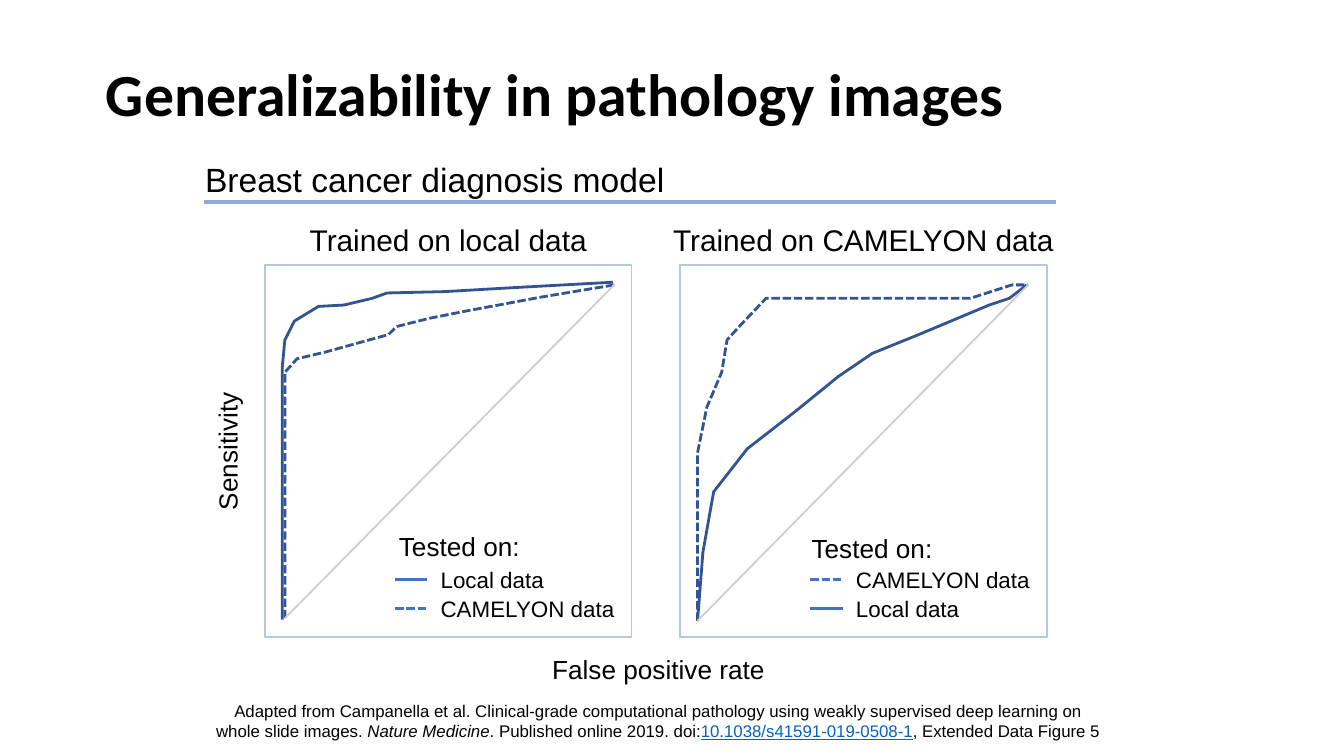
from dataclasses import dataclass

from lxml import etree
from pptx import Presentation
from pptx.dml.color import RGBColor
from pptx.enum.dml import MSO_LINE
from pptx.enum.shapes import MSO_CONNECTOR, MSO_SHAPE
from pptx.enum.text import MSO_ANCHOR, MSO_AUTO_SIZE, PP_ALIGN
from pptx.oxml.ns import qn
from pptx.util import Pt

PX = 9144  # EMU per px, 100 px to the inch
SLIDE_WIDTH = 1000
LEFT, CENTER = PP_ALIGN.LEFT, PP_ALIGN.CENTER
MIDDLE = MSO_ANCHOR.MIDDLE
FIT_SHAPE = MSO_AUTO_SIZE.SHAPE_TO_FIT_TEXT
DASH = MSO_LINE.SQUARE_DOT
STRAIGHT = MSO_CONNECTOR.STRAIGHT
RECTANGLE = MSO_SHAPE.RECTANGLE


@dataclass(frozen=True)
class Theme:
    title_font: str = "Calibri"
    body_font: str = "Arial"
    text: str = "000000"
    link: str = "0563C1"
    frame: str = "B4C7E7"
    curve: str = "325491"
    key: str = "4472C4"
    chance: str = "D0CECE"
    rule: str = "8FAADC"
    title_size: int = 32
    section_size: int = 18
    panel_size: int = 16
    label_size: int = 14
    key_size: int = 12
    source_size: int = 9
    thin: float = 1
    medium: float = 1.5
    thick: float = 2.25


@dataclass(frozen=True)
class Panel:
    title: str
    title_width: int
    left: int
    heading_left: int
    heading_top: int
    curves: tuple  # (points, dashed)
    chance: tuple
    keys: tuple  # (label, label width, dashed)


class SlideBuilder:
    def __init__(self, slide, theme):
        self.shapes = slide.shapes
        self.theme = theme

    def style_line(self, line, color, width, dashed=False):
        line.color.rgb = RGBColor.from_string(color)
        line.width = Pt(width)
        if dashed:
            line.dash_style = DASH

    def style_font(self, font, size, color=None, name=None):
        font.name = name or self.theme.body_font
        font.size = Pt(size)
        font.color.rgb = RGBColor.from_string(color or self.theme.text)

    def text_box(self, left, top, width, height, wrap):
        box = self.shapes.add_textbox(left * PX, top * PX, width * PX, height * PX)
        box.text_frame.word_wrap = wrap
        return box

    def title(self, text, *place):
        frame = self.text_box(*place, wrap=True).text_frame
        frame.vertical_anchor = MIDDLE
        frame.text = text
        paragraph = frame.paragraphs[0]
        paragraph.line_spacing = 0.9
        font = paragraph.runs[0].font
        self.style_font(font, self.theme.title_size, name=self.theme.title_font)
        font.bold = True

    def label(self, text, size, *place, align=LEFT, rotation=0):
        box = self.text_box(*place, wrap=False)
        box.rotation = rotation
        frame = box.text_frame
        frame.auto_size = FIT_SHAPE
        frame.text = text
        paragraph = frame.paragraphs[0]
        paragraph.alignment = align
        self.style_font(paragraph.runs[0].font, size)

    def citation(self, parts, *place):
        """Add a centred source line from (text, style) parts."""
        frame = self.text_box(*place, wrap=True).text_frame
        frame.margin_left = frame.margin_right = 7 * PX
        frame.margin_top = frame.margin_bottom = 4 * PX
        paragraph = frame.paragraphs[0]
        paragraph.alignment = CENTER
        for text, style in parts:
            run = paragraph.add_run()
            run.text = text
            is_link = style == "link"
            self.style_font(run.font, self.theme.source_size,
                            self.theme.link if is_link else None)
            run.font.underline = is_link
            run.font.italic = style == "italic"

    def frame(self, left, top, width, height):
        box = self.shapes.add_shape(RECTANGLE, left * PX, top * PX, width * PX, height * PX)
        box.shadow.inherit = False
        box.fill.background()
        self.style_line(box.line, self.theme.frame, self.theme.thin)

    def curve(self, points, dashed):
        builder = self.shapes.build_freeform(*points[0], scale=PX)
        builder.add_line_segments(points[1:], close=False)
        roc = builder.convert_to_shape()
        roc.shadow.inherit = False
        roc.fill.background()
        self.style_line(roc.line, self.theme.curve, self.theme.medium, dashed)

    def line(self, x1, y1, x2, y2, color, width, dashed=False):
        connector = self.shapes.add_connector(STRAIGHT, x1 * PX, y1 * PX, x2 * PX, y2 * PX)
        etree.SubElement(connector._element.spPr, qn("a:effectLst"))
        self.style_line(connector.line, color, width, dashed)

    def panel(self, panel):
        theme = self.theme
        top, width, height = 197, 273, 277
        self.frame(panel.left, top, width, height)
        for points, dashed in panel.curves:
            self.curve(points, dashed)
        self.line(*panel.chance, theme.chance, theme.thin)
        title_left = panel.left + (width - panel.title_width) // 2
        self.label(panel.title, theme.panel_size, title_left, 160,
                   panel.title_width, 37, align=CENTER)
        self.label("Tested on:", theme.label_size, panel.heading_left,
                   panel.heading_top, 110, 34)
        key_left, key_right = panel.left + 97, panel.left + 121
        for row, (text, text_width, dashed) in enumerate(panel.keys):
            y = 431 + 22 * row
            self.line(key_left, y, key_right, y, theme.key, theme.medium, dashed)
            self.label(text, theme.key_size, key_right, y - 15, text_width, 30)


LOCAL_KEY = ("Local data", 98)
CAMELYON_KEY = ("CAMELYON data", 151)

PANELS = (
    Panel(
        "Trained on local data", 229, 197, 287, 390,
        curves=(
            (((210, 461), (210, 274), (212, 253), (219, 239), (237, 228), (256, 227),
              (277, 222), (288, 218), (331, 217), (383, 214), (456, 210)), False),
            (((212, 460), (212, 277), (221, 267), (242, 262), (289, 249), (295, 243),
              (319, 237), (349, 231), (371, 227), (403, 221), (457, 212)), True),
        ),
        chance=(212, 460, 457, 212),
        keys=((*LOCAL_KEY, False), (*CAMELYON_KEY, True)),
    ),
    Panel(
        "Trained on CAMELYON data", 307, 506, 594, 391,
        curves=(
            (((519, 462), (519, 337), (526, 303), (537, 277), (541, 253), (551, 242),
              (570, 222), (722, 222), (753, 212), (765, 212)), True),
            (((519, 462), (523, 411), (531, 366), (556, 334), (592, 306), (624, 280),
              (649, 263), (686, 248), (736, 227), (751, 222), (764, 212)), False),
        ),
        chance=(519, 462, 765, 212),
        keys=((*CAMELYON_KEY, True), (*LOCAL_KEY, False)),
    ),
)

SOURCE = (
    ("Adapted from Campanella et al. Clinical-grade computational pathology using "
     "weakly supervised deep learning on whole slide images. ", "plain"),
    ("Nature Medicine", "italic"),
    (". Published online 2019. doi:", "plain"),
    ("10.1038/s41591-019-0508-1", "link"),
    (", Extended Data Figure 5", "plain"),
)


def main():
    presentation = Presentation()
    presentation.slide_width = SLIDE_WIDTH * PX
    presentation.slide_height = SLIDE_WIDTH * PX * 9 // 16
    theme = Theme()
    slide = presentation.slides.add_slide(presentation.slide_layouts[6])
    builder = SlideBuilder(slide, theme)

    builder.title("Generalizability in pathology images", 69, 28, 862, 88)
    builder.citation(SOURCE, 151, 517, 677, 38)
    for panel in PANELS:
        builder.panel(panel)
    builder.label("Sensitivity", theme.label_size, 115, 318, 109, 34, rotation=270)
    builder.label("False positive rate", theme.label_size, 401, 481, 179, 34)
    builder.label("Breast cancer diagnosis model", theme.section_size,
                  141, 113, 365, 40, align=CENTER)
    builder.line(152, 150, 786, 150, theme.rule, theme.thick)
    presentation.save("out.pptx")


if __name__ == "__main__":
    main()
